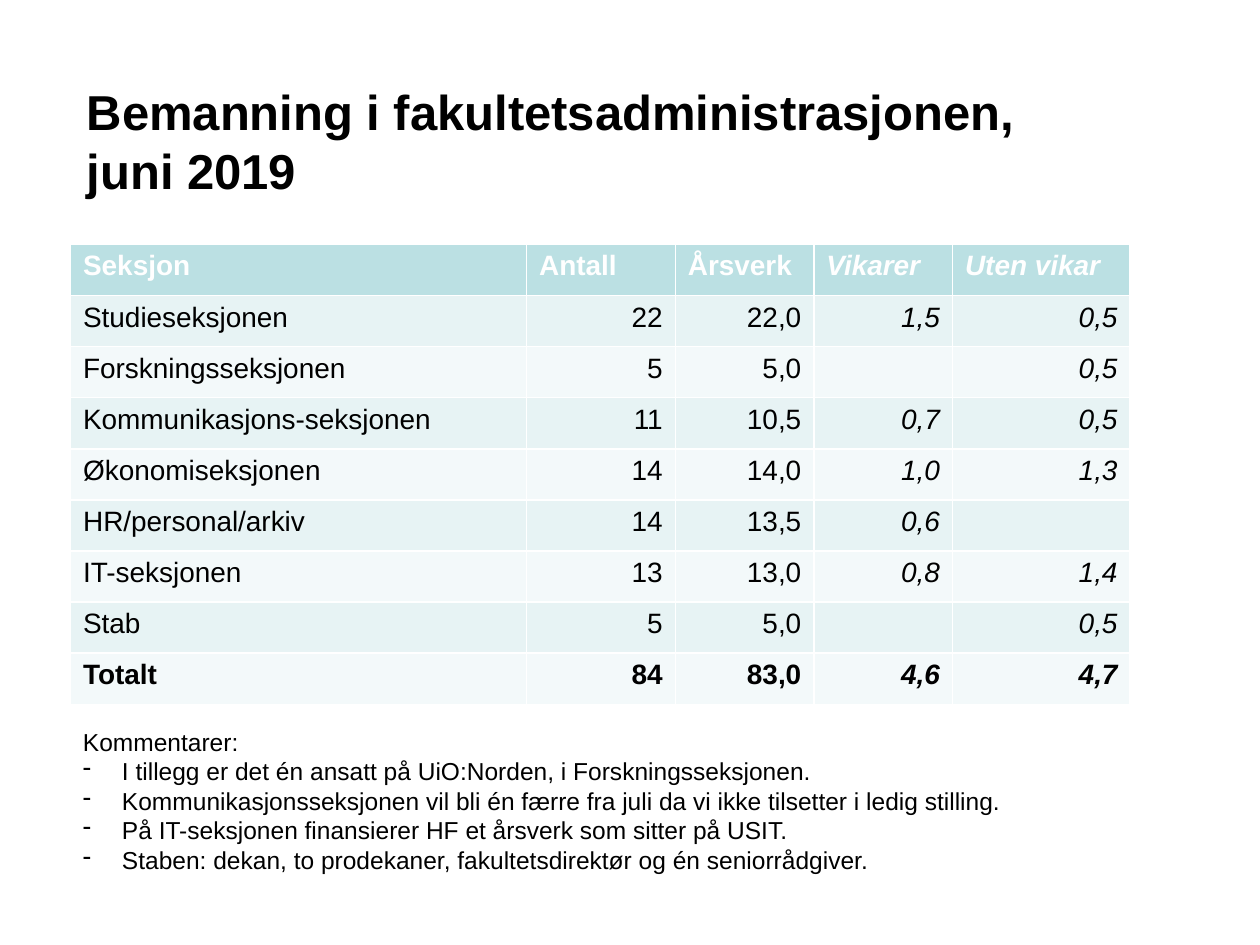
import pptx
import pptx.dml.color
import pptx.enum.text
import pptx.oxml
import pptx.util
from pptx.util import Inches

THEME = {
    "font": "Arial",
    "text": "000000",
    "header_text": "FFFFFF",
    "header_fill": "BBE0E3",
    "band_fills": ("E7F3F4", "F3F9FA"),
    "title_size": 28,
    "table_size": 16,
    "comment_size": 14,
}
ALIGN = pptx.enum.text.PP_ALIGN


def color(value):
    return pptx.dml.color.RGBColor.from_string(value)


def write(paragraph, text, *, size, fill=THEME["text"], bold=False, italic=False, align=ALIGN.LEFT):
    paragraph.text = text
    paragraph.alignment = align
    for run in paragraph.runs:
        run.font.name = THEME["font"]
        run.font.size = pptx.util.Pt(size)
        run.font.color.rgb = color(fill)
        run.font.bold = bold
        run.font.italic = italic


presentation = pptx.Presentation()
presentation.slide_width = Inches(10)
presentation.slide_height = Inches(7.5)
slide = presentation.slides.add_slide(presentation.slide_layouts[6])

title = slide.shapes.add_textbox(Inches(0.59), Inches(0.69), Inches(8.91), Inches(0.85)).text_frame
title.word_wrap = True
title.vertical_anchor = pptx.enum.text.MSO_ANCHOR.MIDDLE
write(title.paragraphs[0], "Bemanning i fakultetsadministrasjonen, \vjuni 2019", size=THEME["title_size"], bold=True)

staffing = [
    ("Seksjon", "Antall", "Årsverk", "Vikarer", "Uten vikar"),
    ("Studieseksjonen", "22", "22,0", "1,5", "0,5"),
    ("Forskningsseksjonen", "5", "5,0", "", "0,5"),
    ("Kommunikasjons-seksjonen", "11", "10,5", "0,7", "0,5"),
    ("Økonomiseksjonen", "14", "14,0", "1,0", "1,3"),
    ("HR/personal/arkiv", "14", "13,5", "0,6", ""),
    ("IT-seksjonen", "13", "13,0", "0,8", "1,4"),
    ("Stab", "5", "5,0", "", "0,5"),
    ("Totalt", "84", "83,0", "4,6", "4,7"),
]
column_widths = (3.62, 1.18, 1.1, 1.1, 1.41)
table = slide.shapes.add_table(
    len(staffing), len(column_widths), Inches(0.56), Inches(1.94), Inches(8.42), Inches(3.65)
).table
for column, width in zip(table.columns, column_widths):
    column.width = Inches(width)

for row_index, values in enumerate(staffing):
    is_header = row_index == 0
    is_total = row_index == len(staffing) - 1
    row_fill = THEME["header_fill"] if is_header else THEME["band_fills"][(row_index - 1) % 2]
    for column_index, value in enumerate(values):
        cell = table.cell(row_index, column_index)
        cell.fill.solid()
        cell.fill.fore_color.rgb = color(row_fill)
        write(
            cell.text_frame.paragraphs[0],
            value,
            size=THEME["table_size"],
            fill=THEME["header_text"] if is_header else THEME["text"],
            bold=is_header or is_total,
            italic=column_index >= 3,
            align=ALIGN.LEFT if is_header or column_index == 0 else ALIGN.RIGHT,
        )

comments = [
    "I tillegg er det én ansatt på UiO:Norden, i Forskningsseksjonen.",
    "Kommunikasjonsseksjonen vil bli én færre fra juli da vi ikke tilsetter i ledig stilling.",
    "På IT-seksjonen finansierer HF et årsverk som sitter på USIT.",
    "Staben: dekan, to prodekaner, fakultetsdirektør og én seniorrådgiver.",
]
comment_frame = slide.shapes.add_textbox(Inches(0.56), Inches(5.72), Inches(8.35), Inches(1.28)).text_frame
comment_frame.word_wrap = True
comment_frame.auto_size = pptx.enum.text.MSO_AUTO_SIZE.SHAPE_TO_FIT_TEXT
write(comment_frame.paragraphs[0], "Kommentarer:", size=THEME["comment_size"])
for comment in comments:
    paragraph = comment_frame.add_paragraph()
    write(paragraph, comment, size=THEME["comment_size"])
    properties = paragraph._p.get_or_add_pPr()
    properties.set("marL", str(Inches(0.31)))
    properties.set("indent", str(Inches(-0.31)))
    bullet = properties.makeelement(pptx.oxml.ns.qn("a:buChar"), {"char": "-"})
    properties.append(bullet)

presentation.save("out.pptx")
